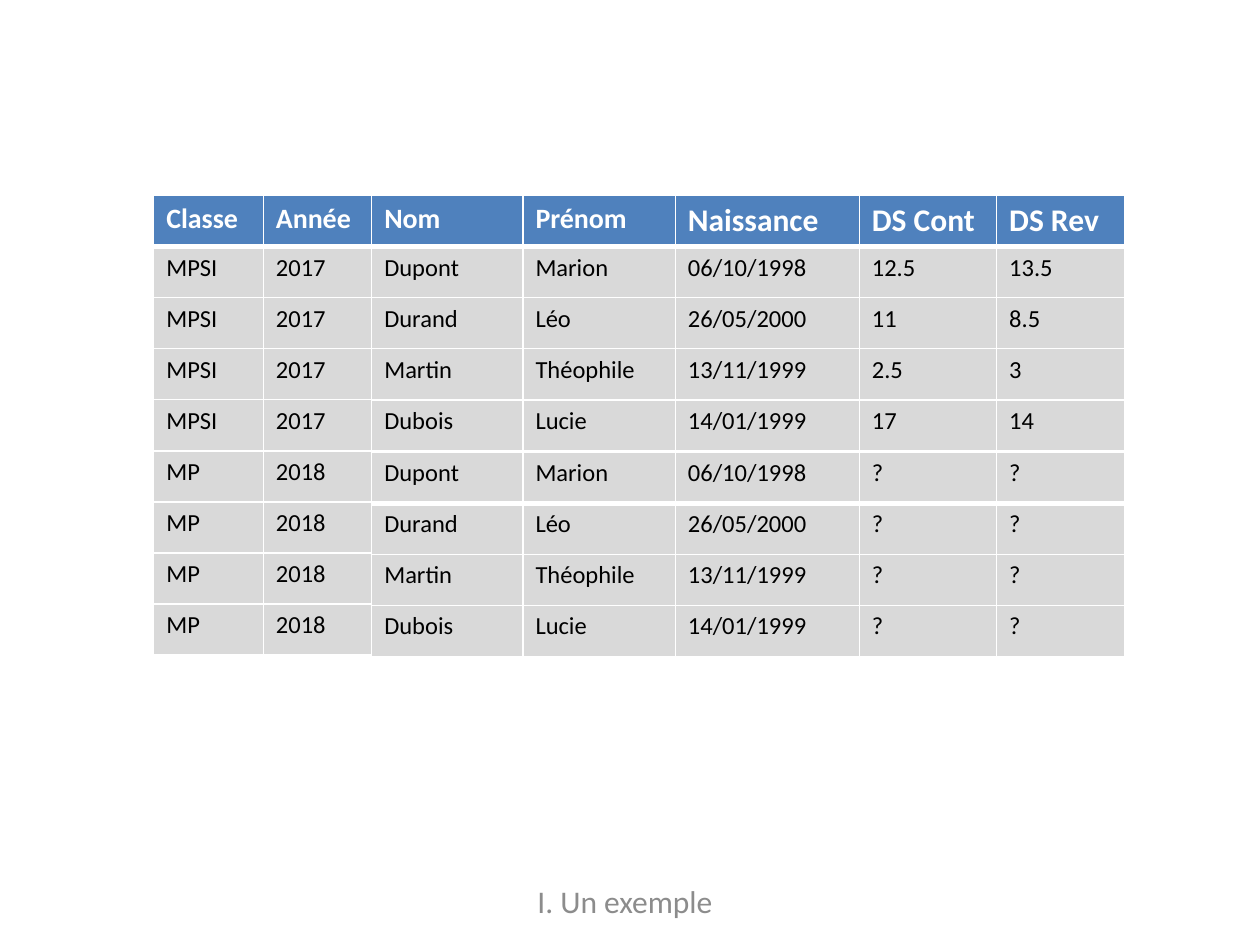
from lxml import etree
from pptx import Presentation
from pptx.dml.color import RGBColor
from pptx.enum import text
from pptx.oxml import ns
from pptx.util import Inches, Pt

COLORS = {"header": "4F81BD", "body": "D9D9D9", "line": "FFFFFF",
          "light": "FFFFFF", "dark": "000000", "footer": "8C8C8C"}

STUDENTS = [("Dupont", "Marion", "06/10/1998"),
            ("Durand", "Léo", "26/05/2000"),
            ("Martin", "Théophile", "13/11/1999"),
            ("Dubois", "Lucie", "14/01/1999")]
MARKS = [("12.5", "13.5"), ("11", "8.5"), ("2.5", "3"), ("17", "14")]
STUDENT_WIDTHS = [1.2, 1.21, 1.46, 1.09, 1.02]


def write(frame, words, size=14, color="dark", bold=False, align=None):
    para = frame.paragraphs[0]
    para.alignment = align
    span = para.add_run()
    span.text = words
    span.font.name = "Calibri"
    span.font.size = Pt(size)
    span.font.bold = bold
    span.font.color.rgb = RGBColor.from_string(COLORS[color])


def draw_border(cell, side, points):
    line = etree.SubElement(cell._tc.get_or_add_tcPr(), ns.qn(f"a:ln{side}"),
                            w=str(Pt(points)), cmpd="sng")
    fill = etree.SubElement(line, ns.qn("a:solidFill"))
    etree.SubElement(fill, ns.qn("a:srgbClr"), val=COLORS["line"])


class Slide:
    def __init__(self, deck):
        self.page = deck.slides.add_slide(deck.slide_layouts[6])

    def table(self, left, top, height, widths, rows, header_sizes=None):
        """The first row has a thick rule below; header_sizes makes it a header."""
        table = self.page.shapes.add_table(
            len(rows), len(widths), Inches(left), Inches(top),
            Inches(sum(widths)), Inches(height)).table
        for column, width in zip(table.columns, widths):
            column.width = Inches(width)
        for r, row in enumerate(rows):
            for c, words in enumerate(row):
                cell = table.cell(r, c)
                borders = {"L": 1, "R": 1, "T": 3 if r == 1 else 1,
                           "B": 3 if r == 0 else 1}
                for side, points in borders.items():
                    draw_border(cell, side, points)
                is_header = r == 0 and header_sizes is not None
                cell.fill.solid()
                cell.fill.fore_color.rgb = RGBColor.from_string(
                    COLORS["header" if is_header else "body"])
                if is_header:
                    write(cell.text_frame, words, size=header_sizes[c],
                          color="light", bold=True)
                else:
                    write(cell.text_frame, words)

    def footer(self, left, top, width, height, words):
        box = self.page.shapes.add_textbox(
            Inches(left), Inches(top), Inches(width), Inches(height))
        frame = box.text_frame
        frame.word_wrap = True
        frame.vertical_anchor = text.MSO_ANCHOR.MIDDLE
        write(frame, words, size=18, color="footer", align=text.PP_ALIGN.CENTER)


def main():
    deck = Presentation()
    deck.slide_width, deck.slide_height = Inches(10), Inches(7.5)
    slide = Slide(deck)

    # Class and year
    classes = [("MPSI", "2017")] * 4 + [("MP", "2018")] * 4
    slide.table(1.22, 1.55, 3.65, [0.87, 0.87],
                [("Classe", "Année")] + classes, header_sizes=[16, 16])

    # Footer
    slide.footer(0.47, 6.95, 8.98, 0.4, "I. Un exemple")

    # First year, with marks
    header = ("Nom", "Prénom", "Naissance", "DS Cont", "DS Rev")
    marked = [student + marks for student, marks in zip(STUDENTS, MARKS)]
    slide.table(2.95, 1.55, 2.03, STUDENT_WIDTHS, [header] + marked,
                header_sizes=[16, 16, 18, 18, 18])

    # Second year, marks unknown
    unknown = [student + ("?", "?") for student in STUDENTS]
    slide.table(2.95, 3.59, 1.62, STUDENT_WIDTHS, unknown)

    deck.save("out.pptx")


if __name__ == "__main__":
    main()
